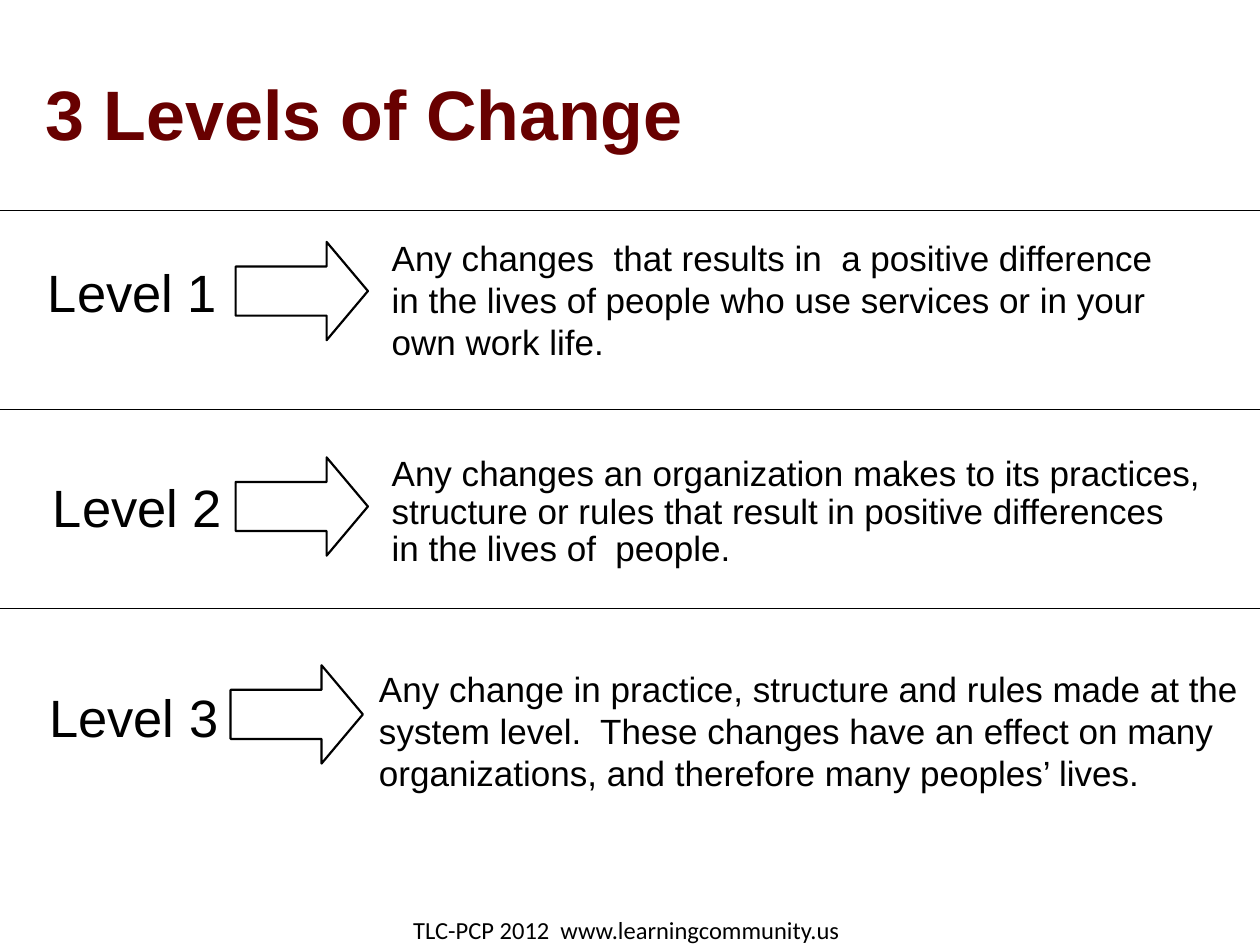
import pptx
import pptx.util
import pptx.dml.color
import pptx.enum.shapes
import pptx.enum.text
import pptx.oxml.ns
import lxml.etree

Inches = pptx.util.Inches
Pt = pptx.util.Pt

COLORS = {"heading": "680000", "ink": "000000"}

# Each level: label place, arrow place, description box, line spacing, text
LEVELS = [
    ("Level 1", (0.29, 2.02), (1.87, 1.92), (3.01, 1.83, 6.42, 1.05), None,
     "Any changes  that results in  a positive difference in the lives of "
     "people who use services or in your own work life."),
    ("Level 2", (0.33, 3.73), (1.87, 3.63), (3.01, 3.57, 6.68, 1.18), 0.9,
     "Any changes an organization makes to its practices, structure or rules "
     "that result in positive differences  in the lives of  people."),
    ("Level 3", (0.3, 5.4), (1.83, 5.28), (2.91, 5.25, 7.03, 1.05), None,
     "Any change in practice, structure and rules made at the system level.  "
     "These changes have an effect on many organizations, and therefore many "
     "peoples’ lives."),
]
DIVIDER_TOPS = [1.67, 3.25, 4.83]


def color(name):
    return pptx.dml.color.RGBColor.from_string(COLORS[name])


def add_run(paragraph, text, size, font="Arial", ink="ink", bold=False):
    run = paragraph.add_run()
    run.text = text
    run.font.size = Pt(size)
    run.font.name = font
    run.font.bold = bold
    run.font.color.rgb = color(ink)


def set_frame(frame, side, edge, wrap=True):
    frame.word_wrap = wrap
    frame.margin_left = frame.margin_right = Inches(side)
    frame.margin_top = frame.margin_bottom = Inches(edge)
    frame.vertical_anchor = pptx.enum.text.MSO_ANCHOR.TOP


def add_text_box(slide, place, side=0.1, edge=0.05, wrap=True):
    box = slide.shapes.add_textbox(*map(Inches, place))
    set_frame(box.text_frame, side, edge, wrap)
    return box.text_frame


def add_title(slide, text):
    title = slide.shapes.title
    title.left, title.top, title.width, title.height = map(
        Inches, (0.26, 0.51, 9.4, 0.74))
    set_frame(title.text_frame, 0.1, 0.05)
    title.text_frame.auto_size = pptx.enum.text.MSO_AUTO_SIZE.NONE
    heading = title.text_frame.paragraphs[0]
    heading.alignment = pptx.enum.text.PP_ALIGN.LEFT
    add_run(heading, text, 40, ink="heading", bold=True)


def add_divider(slide, top):
    divider = slide.shapes.add_connector(
        pptx.enum.shapes.MSO_CONNECTOR.STRAIGHT,
        Inches(0), Inches(top), Inches(10), Inches(top))
    divider.line.color.rgb = color("ink")
    divider.line.width = Pt(0.75)
    lxml.etree.SubElement(divider._element.spPr,
                          pptx.oxml.ns.qn("a:effectLst"))


def add_arrow(slide, left, top):
    arrow = slide.shapes.add_shape(
        pptx.enum.shapes.MSO_SHAPE.RIGHT_ARROW,
        Inches(left), Inches(top), Inches(1.05), Inches(0.78))
    arrow.adjustments[0] = 0.5
    arrow.adjustments[1] = 0.42
    arrow.shadow.inherit = False
    arrow.fill.background()
    arrow.line.color.rgb = color("ink")
    arrow.line.width = Pt(1.25)


def add_level(slide, label, label_at, arrow_at, description_at, spacing, text):
    label_frame = add_text_box(slide, (*label_at, 1.58, 0.59), 0.09, 0.04,
                               wrap=False)
    add_run(label_frame.paragraphs[0], label, 30)
    add_arrow(slide, *arrow_at)
    description = add_text_box(slide, description_at).paragraphs[0]
    description.line_spacing = spacing
    add_run(description, text, 20)


def add_footer(slide):
    footer = add_text_box(slide, (0, 7.17, 10, 0.39), 0.09, 0.04).paragraphs[0]
    footer.alignment = pptx.enum.text.PP_ALIGN.CENTER
    add_run(footer, "TLC-PCP 2012  www.learningcommunity.us", 14, "Calibri")
    add_run(footer, " ", 18, "Calibri")


def main():
    deck = pptx.Presentation()
    deck.slide_width, deck.slide_height = Inches(10), Inches(7.5)
    slide = deck.slides.add_slide(deck.slide_layouts[5])  # title only

    add_title(slide, "3 Levels of Change")

    # Rules above each level
    for top in DIVIDER_TOPS:
        add_divider(slide, top)

    # Label, arrow and description of each level
    for level in LEVELS:
        add_level(slide, *level)

    add_footer(slide)
    deck.save("out.pptx")


if __name__ == "__main__":
    main()
